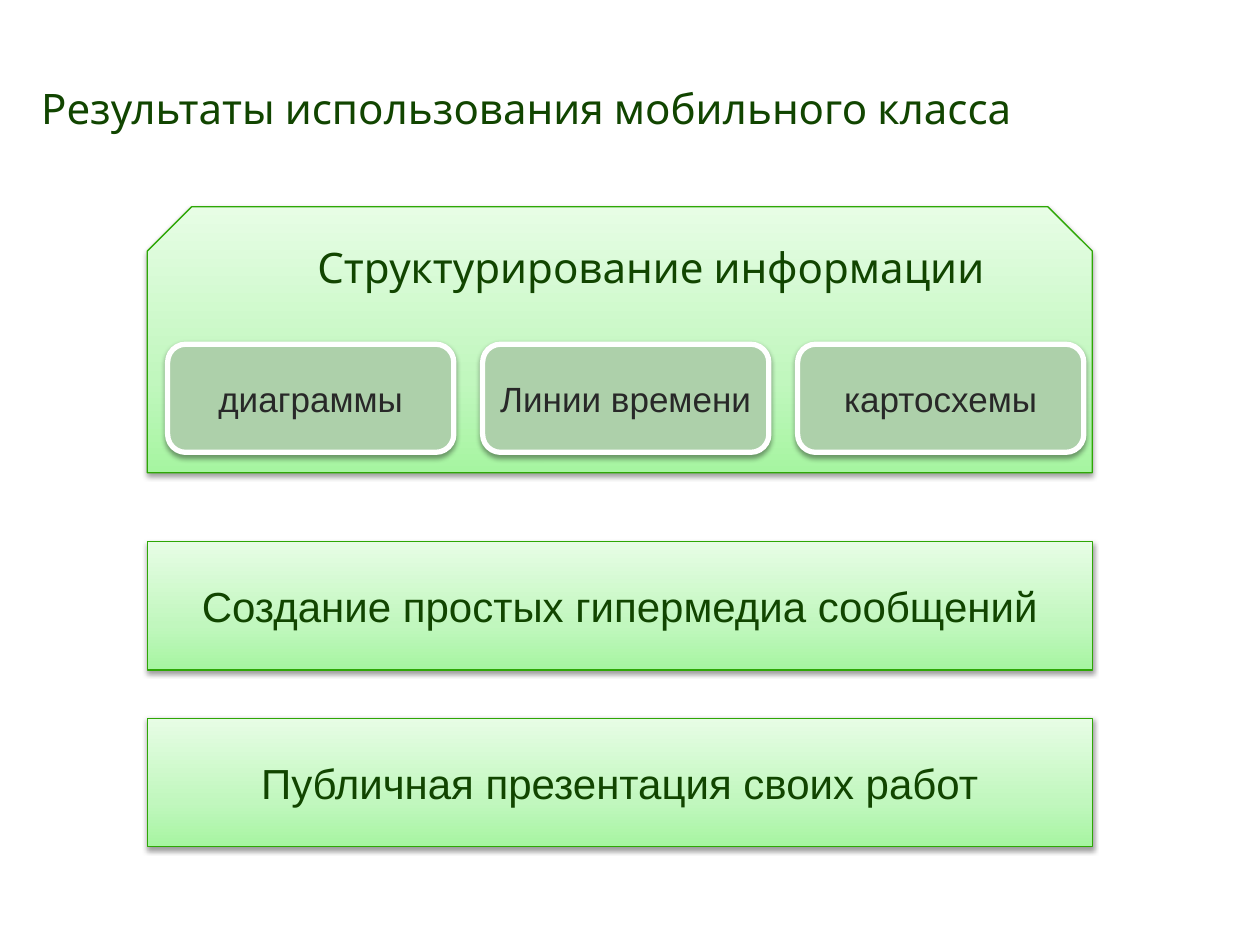
from lxml.etree import SubElement
from pptx import Presentation
from pptx.dml.color import RGBColor
from pptx.enum.shapes import MSO_SHAPE
from pptx.enum.text import MSO_ANCHOR, PP_ALIGN
from pptx.oxml.ns import qn
from pptx.util import Cm, Pt

COLORS = {
    "heading": "114500",
    "label": "282828",
    "card": "ADD0AA",
    "card_line": "FFFFFF",
    "panel_line": "2EA706",
    "grad_deep": "A6F5A1",
    "grad_mid": "C1F7BE",
    "grad_pale": "E7FDE5",
    "shadow": "000000",
}
GRADIENT = [(0, "grad_deep"), (35, "grad_mid"), (100, "grad_pale")]


def rgb(name):
    return RGBColor.from_string(COLORS[name])


def set_line(sp, color, width):
    sp.line.color.rgb = rgb(color)
    sp.line.width = Pt(width)


def add_shadow(sp):
    sp.shadow.inherit = False
    effects = sp._element.spPr.find(qn("a:effectLst"))
    shadow = SubElement(effects, qn("a:outerShdw"), blurRad=str(Pt(3.1)),
                        dist=str(Pt(1.6)), dir="5400000", rotWithShape="0")
    color = SubElement(shadow, qn("a:srgbClr"), val=COLORS["shadow"])
    SubElement(color, qn("a:alpha"), val="38000")


def fill_gradient(sp):
    sp.fill.gradient()
    sp.fill.gradient_angle = 90
    stops = sp._element.spPr.find(qn("a:gradFill")).find(qn("a:gsLst"))
    for stop in list(stops):
        stops.remove(stop)
    for pos, name in GRADIENT:
        stop = SubElement(stops, qn("a:gs"), pos=str(pos * 1000))
        SubElement(stop, qn("a:srgbClr"), val=COLORS[name])


def write(sp, text, size, color, font="Arial", align=PP_ALIGN.CENTER,
          anchor=MSO_ANCHOR.MIDDLE, wrap=False):
    tf = sp.text_frame
    tf.word_wrap = wrap
    tf.vertical_anchor = anchor
    p = tf.paragraphs[0]
    p.text = text
    p.alignment = align
    p.font.name = font
    p.font.size = Pt(size)
    p.font.color.rgb = rgb(color)


def add_heading(s, text, left, top, width, height, anchor):
    box = s.shapes.add_textbox(Cm(left), Cm(top), Cm(width), Cm(height))
    write(box, text, 24, "heading", "Karla", PP_ALIGN.LEFT, anchor, True)


def add_panel(shapes, kind, left, top, width, height):
    sp = shapes.add_shape(kind, Cm(left), Cm(top), Cm(width), Cm(height))
    fill_gradient(sp)
    set_line(sp, "panel_line", 0.75)
    add_shadow(sp)
    return sp


def add_card(shapes, text, left, top, width, height):
    sp = shapes.add_shape(MSO_SHAPE.ROUNDED_RECTANGLE,
                          Cm(left), Cm(top), Cm(width), Cm(height))
    sp.fill.solid()
    sp.fill.fore_color.rgb = rgb("card")
    set_line(sp, "card_line", 3)
    add_shadow(sp)
    write(sp, text, 20, "label")


def add_structuring(s, title, labels, left, top, width, height):
    group = s.shapes.add_group_shape()
    add_panel(group.shapes, MSO_SHAPE.SNIP_2_SAME_RECTANGLE,
              left, top, width, height)
    step = width / len(labels)
    for i, label in enumerate(labels):
        add_card(group.shapes, label, left + 0.41 + i * step, top + 2.77,
                 step - 0.58, 2.18)
    add_heading(s, title, left + 3.18, top + 0.58, 14.1, 1.6, MSO_ANCHOR.TOP)


def add_results(s, texts, left, top, width, height, step):
    for i, text in enumerate(texts):
        bar = add_panel(s.shapes, MSO_SHAPE.RECTANGLE,
                        left, top + i * step, width, height)
        write(bar, text, 24, "heading")


def main():
    prs = Presentation()
    prs.slide_width, prs.slide_height = Cm(25.4), Cm(19.05)
    s = prs.slides.add_slide(prs.slide_layouts[6])
    add_heading(s, "Результаты использования мобильного класса",
                0.58, 1.19, 20.32, 1.98, MSO_ANCHOR.MIDDLE)
    left, width = 2.97, 19.05
    add_structuring(s, "Структурирование информации",
                    ["диаграммы", "Линии времени", "картосхемы"],
                    left, 4.17, width, 5.36)
    add_results(s, ["Создание простых гипермедиа сообщений",
                    "Публичная презентация своих работ"],
                left, 10.92, width, 2.59, 3.56)
    prs.save("out.pptx")


if __name__ == "__main__":
    main()
